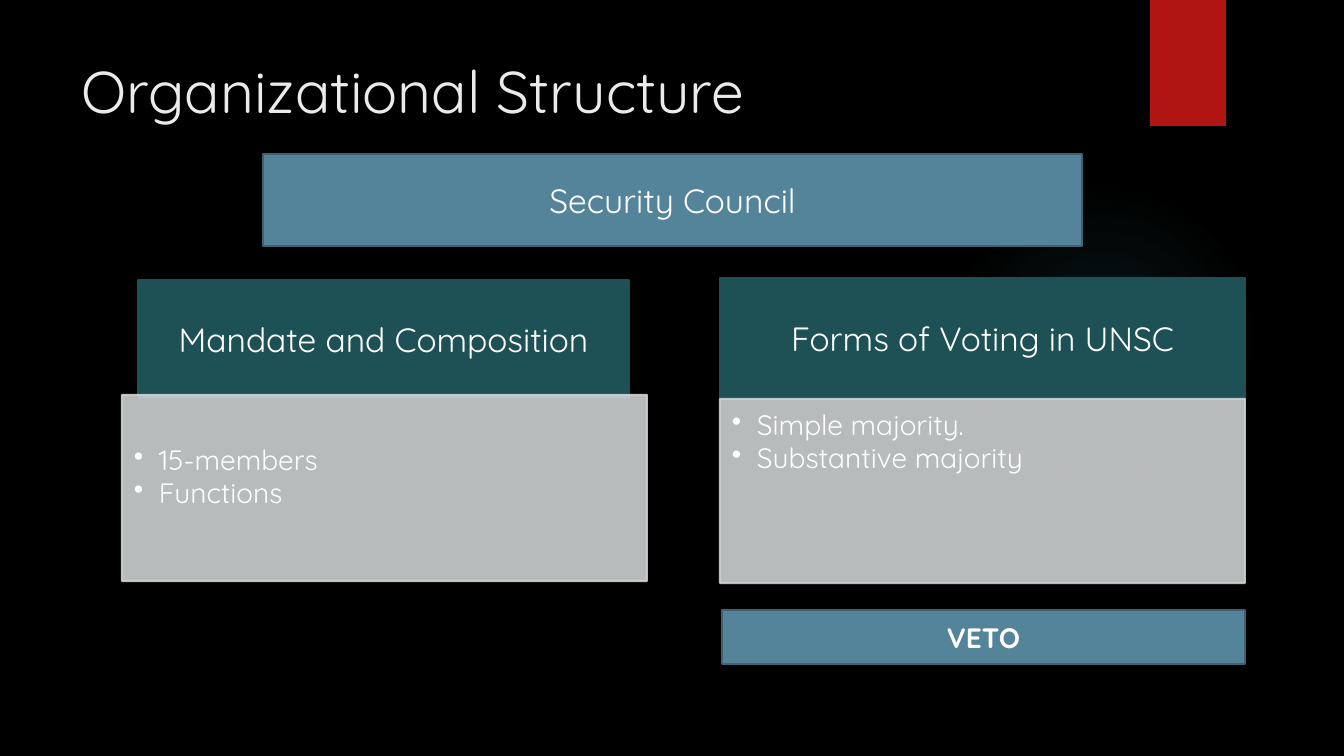
from dataclasses import dataclass

from lxml import etree
from pptx import Presentation
from pptx.dml.color import RGBColor
from pptx.enum.shapes import MSO_SHAPE
from pptx.enum.text import MSO_ANCHOR, PP_ALIGN
from pptx.oxml import parse_xml
from pptx.oxml.ns import nsdecls, qn
from pptx.util import Emu, Pt

PX = 914400 / 100.8


@dataclass(frozen=True)
class Theme:
    """Colours, font and type sizes of the slide."""
    font: str = "Quicksand"
    background: str = "000000"
    title: str = "EBEBEB"
    text: str = "FFFFFF"
    ribbon: str = "B01513"
    glow: str = "50B9C1"
    banner: str = "54849A"
    banner_edge: str = "3E6272"
    header: str = "1E5155"
    panel: str = "CDD0D1"
    title_size: int = 42
    heading_size: int = 24
    body_size: int = 20
    edge_width: float = 1.5


class StructureSlide:
    """Draws the elements of one slide in a shared style."""

    def __init__(self, deck, theme):
        """Add a blank page with the theme background."""
        self.theme = theme
        self.page = deck.slides.add_slide(deck.slide_layouts[6])
        fill = self.page.background.fill
        fill.solid()
        fill.fore_color.rgb = RGBColor.from_string(theme.background)

    def shape(self, frame, colour, edge=None, kind=MSO_SHAPE.RECTANGLE):
        """Add a flat filled shape."""
        shape = self.page.shapes.add_shape(kind, *[Emu(round(v * PX)) for v in frame])
        shape.shadow.inherit = False
        shape.fill.solid()
        shape.fill.fore_color.rgb = RGBColor.from_string(colour)
        if edge:
            shape.line.color.rgb = RGBColor.from_string(edge)
            shape.line.width = Pt(self.theme.edge_width)
        else:
            shape.line.fill.background()
        return shape

    def style(self, para, size, colour, bold=False):
        """Set the font of a paragraph."""
        para.font.name = self.theme.font
        para.font.size = Pt(size)
        para.font.bold = bold
        para.font.color.rgb = RGBColor.from_string(colour)

    def title(self, frame, text):
        """Add the slide title."""
        box = self.page.shapes.add_textbox(*[Emu(round(v * PX)) for v in frame])
        box.text_frame.word_wrap = True
        para = box.text_frame.paragraphs[0]
        para.text = text
        self.style(para, self.theme.title_size, self.theme.title)

    def glow(self, frame):
        """Add the faint round light behind the content."""
        shape = self.shape(frame, self.theme.glow, kind=MSO_SHAPE.OVAL)
        stops = "".join(
            f'<a:gs pos="{place * 1000}"><a:srgbClr val="{self.theme.glow}">'
            f'<a:alpha val="{alpha * 1000}"/></a:srgbClr></a:gs>'
            for place, alpha in ((0, 7), (36, 6), (69, 0)))
        gradient = parse_xml(
            f'<a:gradFill {nsdecls("a")}><a:gsLst>{stops}</a:gsLst><a:path path="circle">'
            '<a:fillToRect l="50000" t="50000" r="50000" b="50000"/></a:path></a:gradFill>')
        solid = shape.fill._xPr.find(qn("a:solidFill"))
        solid.getparent().replace(solid, gradient)

    def label(self, frame, text, colour, edge, size, bold=False):
        """Add a rectangle with one centred line of text."""
        shape = self.shape(frame, colour, edge)
        shape.text_frame.word_wrap = True
        shape.text_frame.vertical_anchor = MSO_ANCHOR.MIDDLE
        para = shape.text_frame.paragraphs[0]
        para.text = text
        para.alignment = PP_ALIGN.CENTER
        self.style(para, size, self.theme.text, bold)

    def bullets(self, frame, items, top_inset):
        """Add a translucent panel with a bulleted list."""
        shape = self.shape(frame, self.theme.panel, self.theme.panel)
        for colour in list(shape._element.spPr.iter(qn("a:srgbClr"))):
            etree.SubElement(colour, qn("a:alpha")).set("val", "90000")
        text = shape.text_frame
        text.word_wrap = True
        text.vertical_anchor = MSO_ANCHOR.TOP
        text.margin_left, text.margin_top, text.margin_right, text.margin_bottom = [
            Emu(round(v * PX)) for v in (12, top_inset, 16, 17)]
        for index, item in enumerate(items):
            para = text.add_paragraph() if index else text.paragraphs[0]
            para.text = item
            para.alignment = PP_ALIGN.LEFT
            para.line_spacing = 0.9
            para.space_after = Pt(2)
            properties = para._p.get_or_add_pPr()
            indent = round(25 * PX)
            properties.set("marL", str(indent))
            properties.set("indent", str(-indent))
            etree.SubElement(properties, qn("a:buChar")).set("char", "•")
            self.style(para, self.theme.body_size, self.theme.text)


def main():
    """Build and save the organizational structure slide."""
    theme = Theme()
    deck = Presentation()
    deck.slide_width, deck.slide_height = Emu(round(1344 * PX)), Emu(round(756 * PX))
    slide = StructureSlide(deck, theme)
    slide.glow((949, 184, 310, 310))
    slide.shape((1150, 0, 76, 126), theme.ribbon)
    slide.title((72, 50, 1037, 154), "Organizational Structure")
    slide.label((263, 154, 819, 92), "Security Council",
                theme.banner, theme.banner_edge, theme.heading_size)
    columns = (
        ((138, 280, 491, 118), "Mandate and Composition",
         (122, 395, 525, 186), ("15-members", "Functions"), 51),
        ((720, 278, 525, 121), "Forms of Voting in UNSC",
         (720, 399, 525, 184), ("Simple majority.", "Substantive majority"), 12),
    )
    for header_frame, heading, panel_frame, items, top_inset in columns:
        slide.label(header_frame, heading, theme.header, theme.header, theme.heading_size)
        slide.bullets(panel_frame, items, top_inset)
    slide.label((722, 610, 523, 54), "VETO",
                theme.banner, theme.banner_edge, theme.body_size, bold=True)
    deck.save("out.pptx")


if __name__ == "__main__":
    main()
